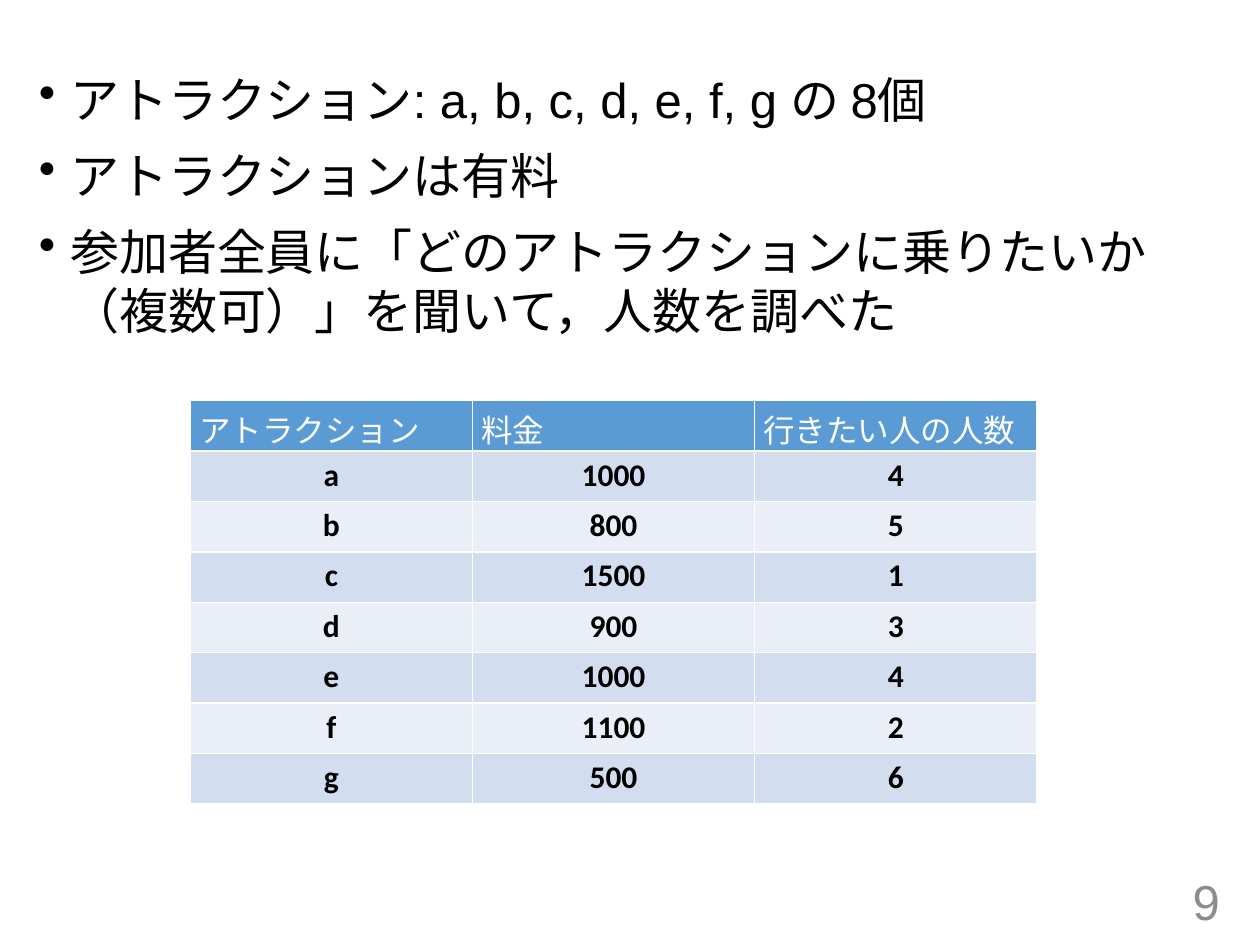
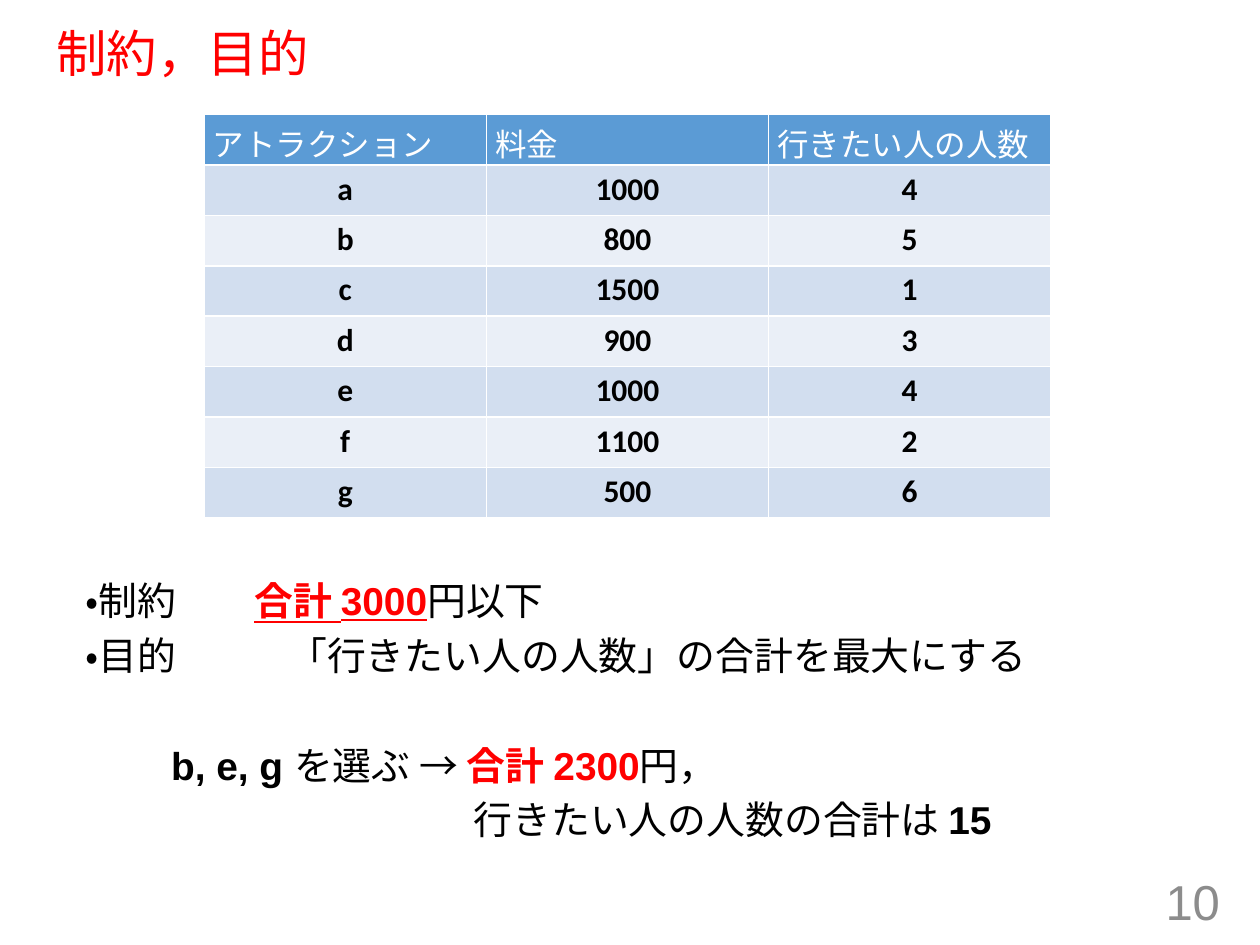
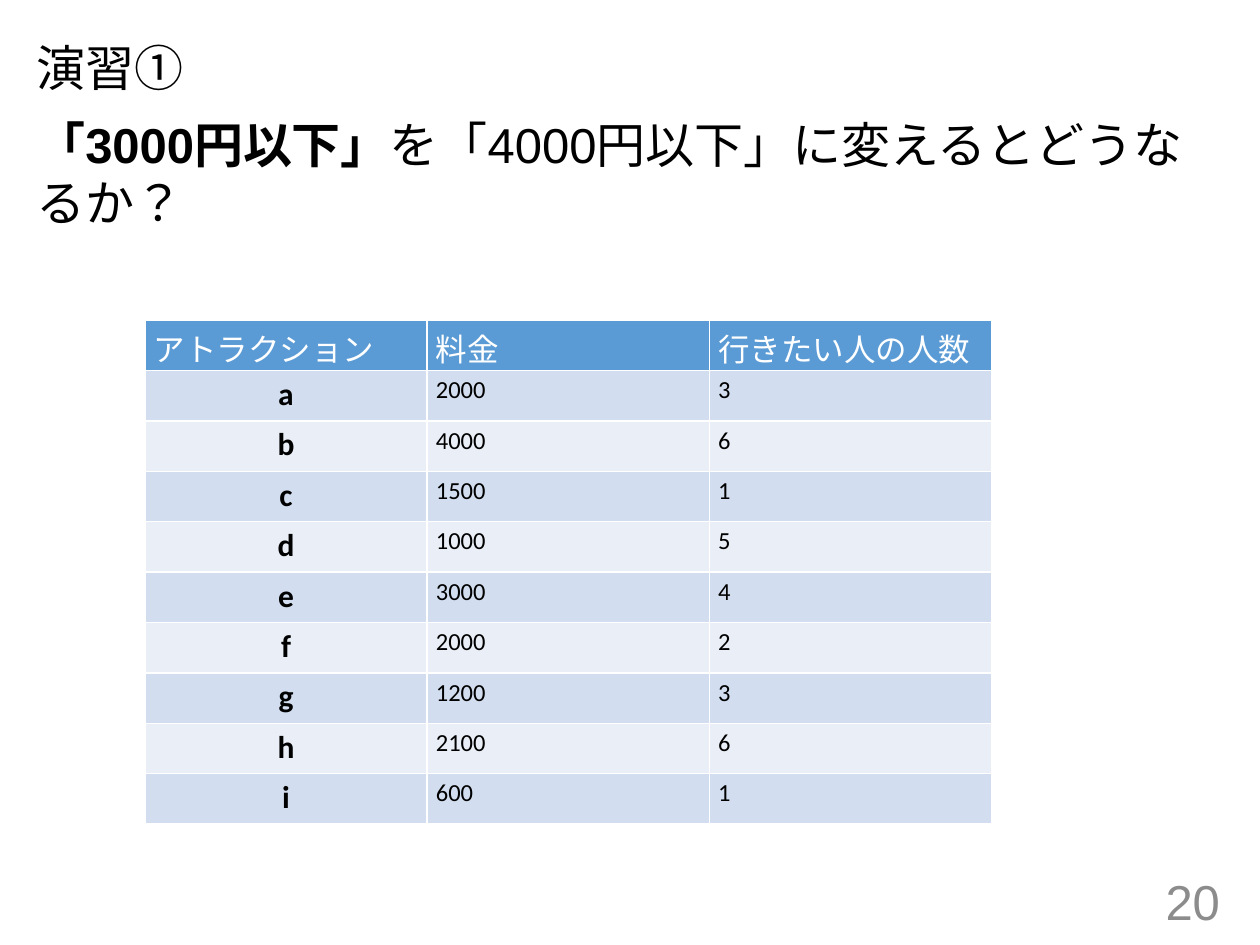
from pptx import Presentation
from pptx import util as u
from pptx.dml.color import RGBColor
from pptx.enum import lang, text
from pptx.oxml import parse_xml
from pptx.oxml.ns import nsdecls

BLACK = RGBColor(0x00, 0x00, 0x00)
WHITE = RGBColor(0xFF, 0xFF, 0xFF)
RED = RGBColor(0xFF, 0x00, 0x00)
GRAY = RGBColor(0x8C, 0x8C, 0x8C)
HEADER_BLUE = RGBColor(0x5B, 0x9B, 0xD5)
BANDS = [RGBColor(0xD2, 0xDE, 0xEF), RGBColor(0xEA, 0xEF, 0xF7)]

COLUMN, ROW = 2.24, 0.4
HEADINGS = ["アトラクション", "料金", "行きたい人の人数"]
BOLD = {"bold": True}
RED_BOLD = {"bold": True, "color": RED}
TOTAL = {"bold": True, "color": RED, "underline": True}

prs = Presentation()
prs.slide_width, prs.slide_height = u.Inches(10), u.Inches(7.5)


def add_text(slide, box, paragraphs, size, color=BLACK, anchor=text.MSO_ANCHOR.TOP):
    """Each paragraph is (runs, options); each run is (words, font settings)."""
    frame = slide.shapes.add_textbox(*map(u.Inches, box)).text_frame
    frame.word_wrap = True
    frame.vertical_anchor = anchor
    for i, (runs, options) in enumerate(paragraphs):
        para = frame.paragraphs[0] if i == 0 else frame.add_paragraph()
        props = para._p.get_or_add_pPr()
        left = options.get("left", 0)
        if "bullet" in options:
            props.set("indent", str(-u.Inches(left)))
            props.append(parse_xml(f'<a:buChar {nsdecls("a")} char="{options["bullet"]}"/>'))
        if "tab" in options:
            props.append(parse_xml(f'<a:tabLst {nsdecls("a")}><a:tab pos="{u.Inches(options["tab"])}"'
                                   ' algn="l"/></a:tabLst>'))
        props.set("marL", str(u.Inches(left)))
        para.alignment = options.get("align", text.PP_ALIGN.LEFT)
        para.line_spacing = options.get("spacing", 1.0)
        para.space_before = u.Pt(options.get("before", 10) if i else 0)
        for words, settings in runs:
            run = para.add_run()
            run.text = words
            font = run.font
            font.name, font.size = "Arial", u.Pt(size)
            font.language_id = lang.MSO_LANGUAGE_ID.JAPANESE
            font.color.rgb = settings.get("color", color)
            for key in ("bold", "underline"):
                setattr(font, key, settings.get(key, False))


def add_price_table(slide, left, top, prices, wishes, plain=False):
    """Attractions are lettered from a; plain shows the numbers small and left-aligned."""
    rows = [HEADINGS] + [[chr(ord("a") + i), price, wish]
                         for i, (price, wish) in enumerate(zip(prices, wishes))]
    table = slide.shapes.add_table(len(rows), 3, u.Inches(left), u.Inches(top),
                                   u.Inches(3 * COLUMN), u.Inches(len(rows) * ROW)).table
    for column in table.columns:
        column.width = u.Inches(COLUMN)
    for r, row in enumerate(rows):
        table.rows[r].height = u.Inches(ROW)
        for c, value in enumerate(row):
            cell = table.cell(r, c)
            cell.margin_left = cell.margin_right = u.Inches(0.07)
            cell.margin_top = cell.margin_bottom = u.Inches(0.04)
            small = plain and r > 0 and c > 0
            para = cell.text_frame.paragraphs[0]
            para.alignment = text.PP_ALIGN.CENTER if r and not small else text.PP_ALIGN.LEFT
            run = para.add_run()
            run.text = str(value)
            run.font.name, run.font.size = "Calibri", u.Pt(14 if small else 18)
            run.font.language_id = lang.MSO_LANGUAGE_ID.JAPANESE
            run.font.bold = r > 0 and not small
            run.font.color.rgb = BLACK if r else WHITE
            for side in "LRTB":
                cell._tc.get_or_add_tcPr().append(parse_xml(
                    f'<a:ln{side} {nsdecls("a")} w="{u.Pt(1)}"><a:solidFill>'
                    f'<a:srgbClr val="{WHITE}"/></a:solidFill></a:ln{side}>'))
            cell.fill.solid()
            cell.fill.fore_color.rgb = BANDS[(r - 1) % 2] if r else HEADER_BLUE


slides = []
for number in ("9", "10", "20"):
    slide = prs.slides.add_slide(prs.slide_layouts[6])
    add_text(slide, (7.53, 6.95, 2.25, 0.4), [([(number, {})], {"align": text.PP_ALIGN.RIGHT})],
             28, GRAY, text.MSO_ANCHOR.MIDDLE)
    slides.append(slide)
survey, goal, exercise = slides

# Survey of the attractions
prices, wishes = [1000, 800, 1500, 900, 1000, 1100, 500], [4, 5, 1, 3, 4, 2, 6]
facts = ["アトラクション: a, b, c, d, e, f, g の 8個",
         "アトラクションは有料",
         "参加者全員に「どのアトラクションに乗りたいか（複数可）」を聞いて，人数を調べた"]
add_text(survey, (0.21, 0.5, 9.57, 1.28),
         [([(fact, {})], {"bullet": "•", "left": 0.25}) for fact in facts], 28)
add_price_table(survey, 1.51, 3.18, prices, wishes)

# Constraint and goal
add_text(goal, (0.35, 0.19, 9.25, 0.51), [([("制約，目的", {})], {"spacing": 0.9})],
         28.8, RED, text.MSO_ANCHOR.MIDDLE)
add_text(goal, (0.58, 4.6, 9.57, 1.01), [
    ([("・制約\t", {}), ("合計 3000", TOTAL), ("円以下", {})], {"spacing": 0.8, "tab": 1.34}),
    ([("・目的\t「行きたい人の人数」の合計を最大にする", {})], {"spacing": 0.8, "tab": 1.61}),
    ([("b, e, g ", BOLD), ("を選ぶ → ", {}), ("合計 2300", RED_BOLD), ("円，", {})],
     {"spacing": 0.8, "left": 0.68, "before": 41.3}),
    ([("行きたい人の人数の合計は ", {}), ("15", BOLD)], {"spacing": 0.8, "left": 3.08}),
], 22.2)
add_price_table(goal, 1.62, 0.91, prices, wishes)

# Exercise
add_text(exercise, (0.19, 0.25, 9.62, 1.66), [
    ([("演習①", {})], {}),
    ([("「3000円以下」", BOLD), ("を「4000円以下」に変えるとどうなるか？", {})], {}),
], 28)
add_price_table(exercise, 1.15, 2.54, [2000, 4000, 1500, 1000, 3000, 2000, 1200, 2100, 600],
                [3, 6, 1, 5, 4, 2, 3, 6, 1], plain=True)

prs.save("out.pptx")
